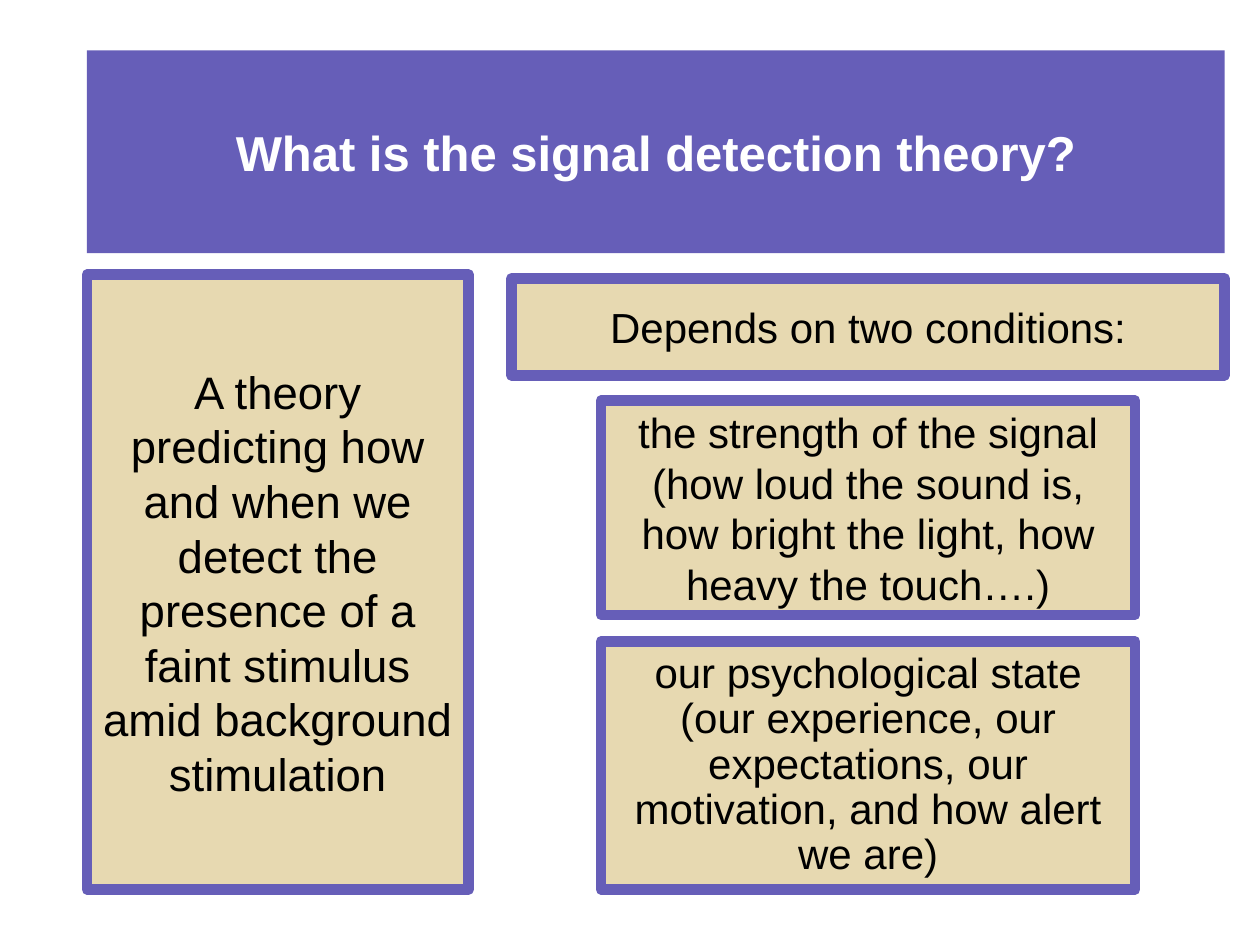
"""Build a slide that explains signal detection theory."""
from dataclasses import dataclass
from typing import Optional

from pptx import Presentation
from pptx.dml.color import RGBColor
from pptx.enum.shapes import MSO_SHAPE
from pptx.enum.text import MSO_ANCHOR, PP_ALIGN
from pptx.slide import Slide
from pptx.util import Inches, Pt


@dataclass(frozen=True)
class Theme:
    font: str = "Arial"
    purple: RGBColor = RGBColor(0x66, 0x5E, 0xB8)
    sand: RGBColor = RGBColor(0xE7, 0xD9, 0xB1)
    white: RGBColor = RGBColor(0xFF, 0xFF, 0xFF)
    black: RGBColor = RGBColor(0, 0, 0)
    title_size: int = 28
    definition_size: int = 26
    body_size: int = 24
    border: int = 6


@dataclass(frozen=True)
class Panel:
    left: float
    top: float
    width: float
    height: float
    text: str
    size: int
    heading: bool = False
    line_spacing: Optional[float] = None


THEME = Theme()
LEFT, RIGHT, BOTTOM = 0.69, 9.72, 7.06
CONDITION_LEFT, CONDITION_WIDTH = 4.77, 4.24

PANELS = [
    Panel(LEFT, 0.4, RIGHT - LEFT, 1.61, "What is the signal detection theory?",
          THEME.title_size, heading=True),
    Panel(LEFT, 2.18, 3.03, BOTTOM - 2.18,
          "A theory predicting how and when we detect the presence of a "
          "faint stimulus amid background stimulation", THEME.definition_size),
    Panel(4.06, 2.21, RIGHT - 4.06, 0.77, "Depends on two conditions:", THEME.body_size),
    Panel(CONDITION_LEFT, 3.18, CONDITION_WIDTH, 1.7,
          "the strength of the signal\n"
          "(how loud the sound is, how bright the light, how heavy the touch….)",
          THEME.body_size),
    Panel(CONDITION_LEFT, 5.09, CONDITION_WIDTH, BOTTOM - 5.09,
          "our psychological state\n"
          "(our experience, our expectations, our motivation, and how alert we are)",
          THEME.body_size, line_spacing=0.9),
]


def add_panel(s: Slide, panel: Panel) -> None:
    sp = s.shapes.add_shape(
        MSO_SHAPE.RECTANGLE, Inches(panel.left), Inches(panel.top),
        Inches(panel.width), Inches(panel.height))
    sp.shadow.inherit = False
    sp.fill.solid()
    sp.fill.fore_color.rgb = THEME.purple if panel.heading else THEME.sand
    if panel.heading:
        sp.line.fill.background()
    else:
        sp.line.color.rgb = THEME.purple
        sp.line.width = Pt(THEME.border)

    tf = sp.text_frame
    tf.word_wrap = True
    tf.vertical_anchor = MSO_ANCHOR.MIDDLE
    tf.text = panel.text
    for p in tf.paragraphs:
        p.alignment = PP_ALIGN.CENTER
        p.line_spacing = panel.line_spacing
        for r in p.runs:
            r.font.name = THEME.font
            r.font.size = Pt(panel.size)
            r.font.bold = panel.heading
            r.font.color.rgb = THEME.white if panel.heading else THEME.black


def main() -> None:
    prs = Presentation()
    prs.slide_width, prs.slide_height = Inches(10), Inches(7.5)
    s = prs.slides.add_slide(prs.slide_layouts[6])
    for panel in PANELS:
        add_panel(s, panel)
    prs.save("out.pptx")


if __name__ == "__main__":
    main()
